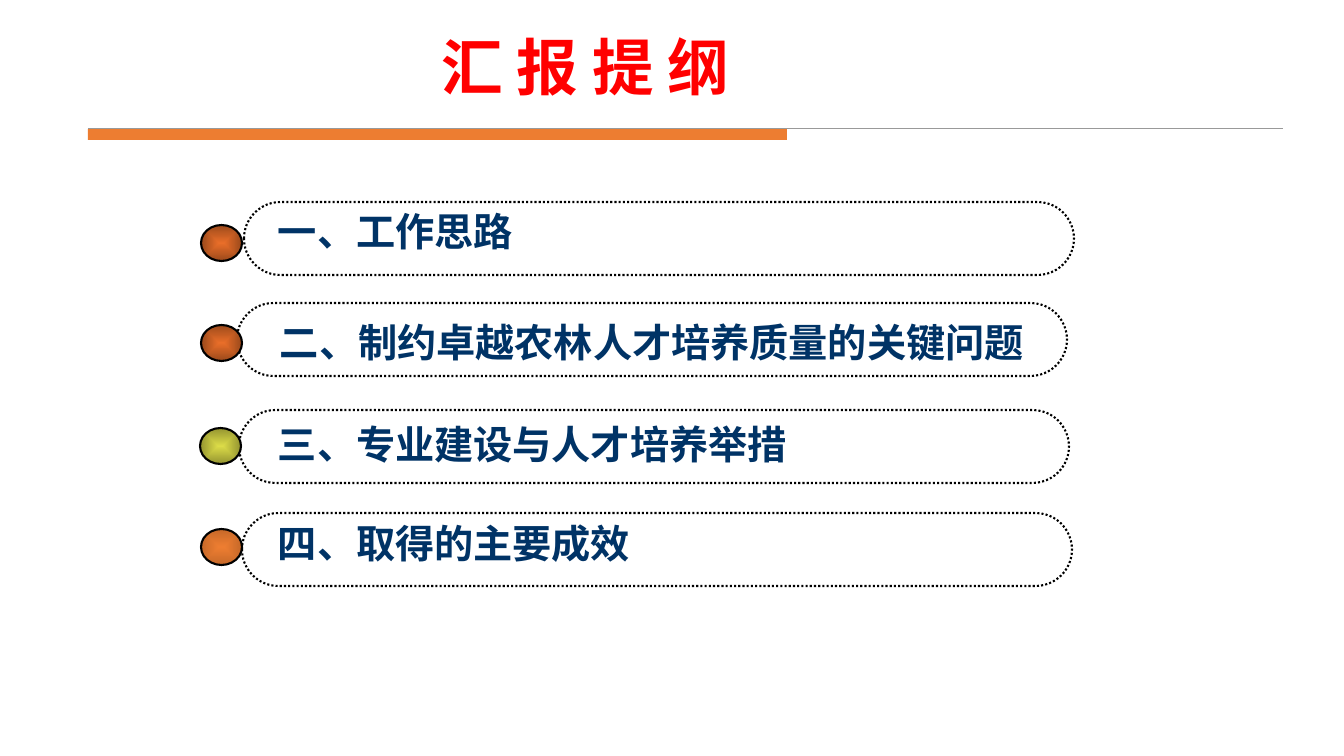
from lxml import etree
from pptx import Presentation
from pptx.dml.color import RGBColor
from pptx.enum.dml import MSO_LINE
from pptx.enum.shapes import MSO_CONNECTOR, MSO_SHAPE
from pptx.enum.text import PP_ALIGN
from pptx.oxml.ns import qn
from pptx.util import Pt

PX = 914400 / 100.8
FONT = "Noto Sans CJK SC"
RECTANGLE, PILL, OVAL = MSO_SHAPE.RECTANGLE, MSO_SHAPE.ROUNDED_RECTANGLE, MSO_SHAPE.OVAL
DOTTED = MSO_LINE.ROUND_DOT
STRAIGHT = MSO_CONNECTOR.STRAIGHT
LEFT, CENTER = PP_ALIGN.LEFT, PP_ALIGN.CENTER

RED = RGBColor(0xFF, 0x00, 0x00)
NAVY = RGBColor(0x00, 0x33, 0x66)
BLACK = RGBColor(0x00, 0x00, 0x00)
GRAY = RGBColor(0x99, 0x99, 0x99)
ORANGE = RGBColor(0xED, 0x7D, 0x31)
RUST = (RGBColor(0xE9, 0x6E, 0x29), RGBColor(0x9B, 0x49, 0x1B))
OLIVE = (RGBColor(0xDC, 0xDC, 0x48), RGBColor(0x93, 0x93, 0x30))
AMBER = (ORANGE, RGBColor(0xC7, 0x69, 0x29))


def px(*lengths):
    """Turn pixel lengths into EMU."""
    return [round(length * PX) for length in lengths]


def add_text(box, text, size, color, alignment):
    text_frame = slide.shapes.add_textbox(*px(*box)).text_frame
    text_frame.word_wrap = True
    paragraph = text_frame.paragraphs[0]
    paragraph.alignment = alignment
    run = paragraph.add_run()
    run.text = text
    for name, value in {"name": FONT, "size": Pt(size), "bold": True}.items():
        setattr(run.font, name, value)
    run.font.color.rgb = color
    etree.SubElement(run.font._element, qn("a:ea"), typeface=FONT)


presentation = Presentation()
presentation.slide_width, presentation.slide_height = px(1344, 756)
slide = presentation.slides.add_slide(presentation.slide_layouts[6])

# Title and rule
rule = slide.shapes.add_connector(STRAIGHT, *px(88, 129, 1283, 129))
rule.line.color.rgb = GRAY
rule.line.width = Pt(0.75)
etree.SubElement(rule._element.spPr, qn("a:effectLst"))

bar = slide.shapes.add_shape(RECTANGLE, *px(88, 129, 699, 11))
bar.shadow.inherit = False
bar.fill.solid()
bar.fill.fore_color.rgb = ORANGE
bar.line.fill.background()

add_text((152, 24, 867, 83), "汇 报 提 纲", 44, RED, CENTER)

# Outline: text, dot colours, then left and top of pill, text and dot
outline = [
    ("一、工作思路", RUST, (244, 202), (268, 202), (201, 225)),
    ("二、制约卓越农林人才培养质量的关键问题", RUST, (237, 303), (270, 313), (201, 325)),
    ("三、专业建设与人才培养举措", OLIVE, (239, 410), (268, 415), (200, 428)),
    ("四、取得的主要成效", AMBER, (242, 513), (268, 514), (201, 529)),
]
for text, dot_colors, pill_place, text_place, dot_place in outline:
    pill = slide.shapes.add_shape(PILL, *px(*pill_place, 830, 73))
    pill.adjustments[0] = 0.5
    pill.fill.background()
    pill.line.dash_style = DOTTED

    add_text((*text_place, 806, 57), text, 28, NAVY, LEFT)

    dot = slide.shapes.add_shape(OVAL, *px(*dot_place, 41, 36))
    dot.fill.gradient()
    for stop, color in zip(dot.fill.gradient_stops, dot_colors):
        stop.color.rgb = color
    linear = dot._element.spPr.find(".//" + qn("a:lin"))
    radial = etree.Element(qn("a:path"), path="shape")
    etree.SubElement(radial, qn("a:fillToRect"), l="50000", t="50000", r="50000", b="50000")
    linear.getparent().replace(linear, radial)

    for shape in (pill, dot):
        shape.shadow.inherit = False
        shape.line.color.rgb = BLACK
        shape.line.width = Pt(1.5)

presentation.save("out.pptx")
